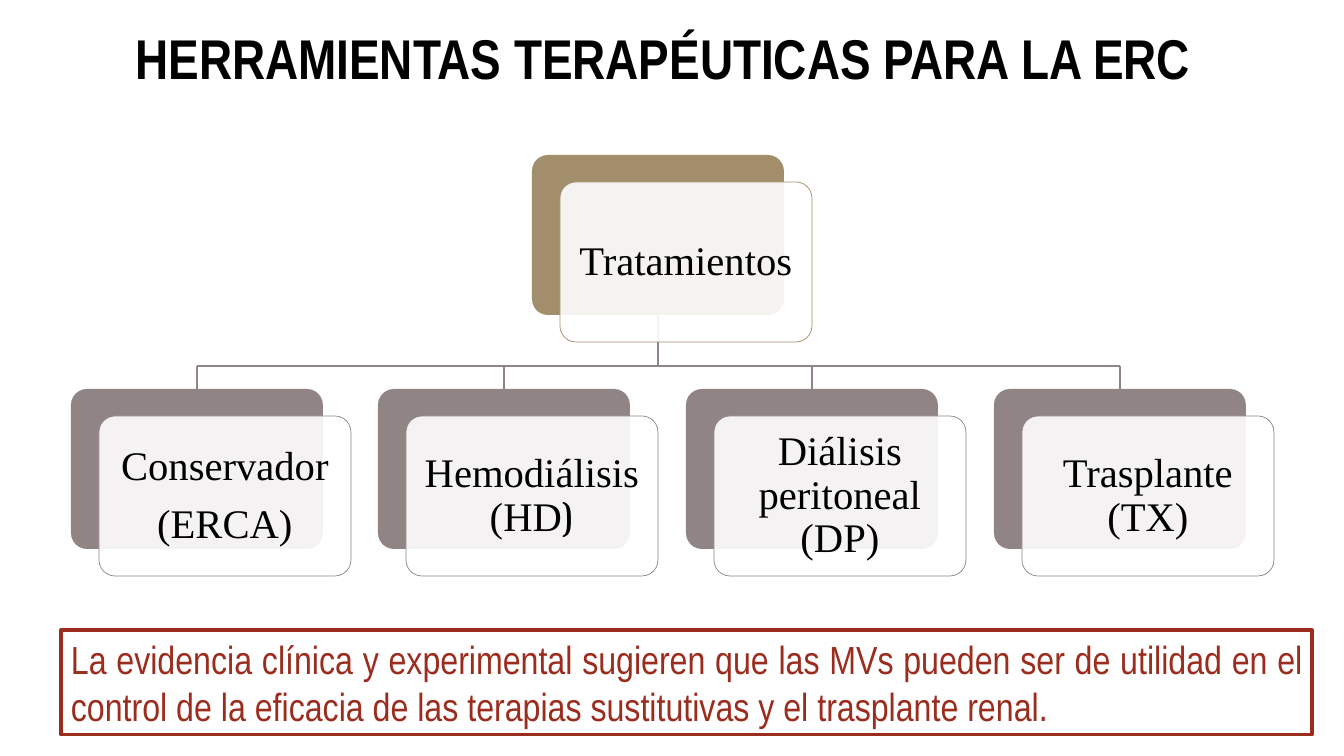
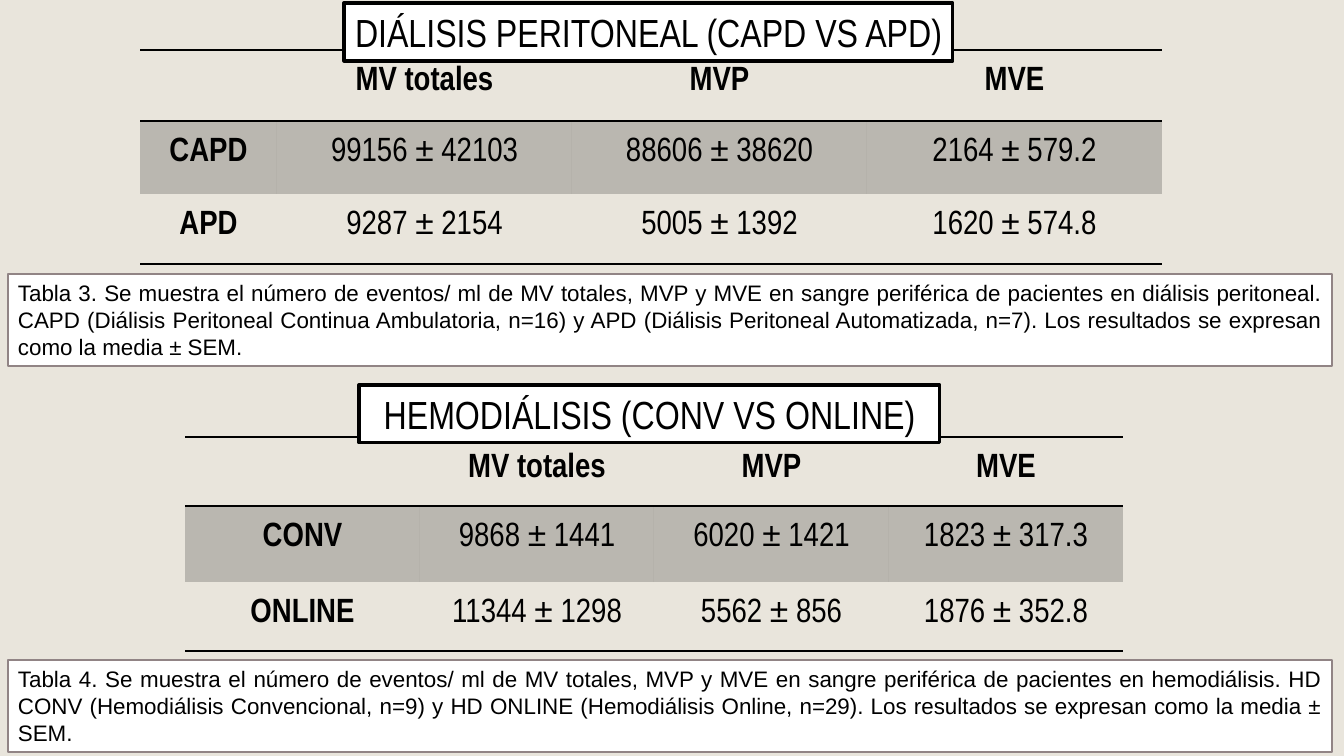
from dataclasses import dataclass

from lxml import etree
from pptx import Presentation
from pptx.dml.color import RGBColor
from pptx.enum.shapes import MSO_CONNECTOR, MSO_SHAPE
from pptx.enum.text import MSO_ANCHOR, PP_ALIGN
from pptx.oxml.ns import qn
from pptx.util import Emu, Pt

RECT, ROUNDED = MSO_SHAPE.RECTANGLE, MSO_SHAPE.ROUNDED_RECTANGLE
STRAIGHT = MSO_CONNECTOR.STRAIGHT
TOP, MIDDLE = MSO_ANCHOR.TOP, MSO_ANCHOR.MIDDLE
CENTER, JUSTIFY = PP_ALIGN.CENTER, PP_ALIGN.JUSTIFY

BLACK = RGBColor(0x00, 0x00, 0x00)
WHITE = RGBColor(0xFF, 0xFF, 0xFF)
SAND = RGBColor(0xE9, 0xE5, 0xDC)
OCHRE = RGBColor(0xA2, 0x8E, 0x6A)
MAUVE = RGBColor(0x91, 0x84, 0x85)
RUST = RGBColor(0x9B, 0x2D, 0x1F)

# Font formats
HEADLINE = {"name": "Arial Narrow", "size": Pt(40), "bold": True}
BANNER = {"name": "Arial Narrow", "size": Pt(28)}
CAPTION = {"name": "Arial", "size": Pt(16)}
TABLE_TEXT = {"name": "Arial Narrow", "size": Pt(24), "bold": False}
TABLE_LABEL = TABLE_TEXT | {"bold": True}
CARD_TEXT = {"name": "Times New Roman", "size": Pt(29)}
BRACKET = CARD_TEXT | {"name": "TeX Gyre Bonum"}

# Card geometry; the rounded corners add their own inset to the text
CARD_W, CARD_H = 252, 160
FRONT_DX, FRONT_DY, CARD_INSET = 28, 27, 10
BUS_Y = 366


def px(value: int) -> Emu:
    return Emu(round(value * 914400 / 100.8))


@dataclass(frozen=True)
class Run:
    text: str
    style: dict


@dataclass(frozen=True)
class Card:
    left: int
    top: int
    color: RGBColor
    paragraphs: list[list[Run]]


@dataclass(frozen=True)
class TextBlock:
    left: int
    top: int
    width: int
    height: int
    text: str
    style: dict
    align: PP_ALIGN = CENTER
    color: RGBColor = BLACK
    line: RGBColor | None = None
    line_pt: float = 2.25


@dataclass(frozen=True)
class ResultTable:
    left: int
    top: int
    columns: list[int]
    row_heights: list[int]
    rows: list[list[str]]


def add_run(paragraph, run: Run, color: RGBColor = BLACK) -> None:
    part = paragraph.add_run()
    part.text = run.text
    for attribute, value in run.style.items():
        setattr(part.font, attribute, value)
    part.font.color.rgb = color


def set_alpha(fill, percent: int) -> None:
    color = fill._xPr.find(qn("a:solidFill"))[0]
    etree.SubElement(color, qn("a:alpha"), val=str(percent * 1000))


def add_box(slide, kind, left: int, top: int, width: int, height: int, fill: RGBColor,
            line: RGBColor | None = None, line_pt: float = 1):
    box = slide.shapes.add_shape(kind, px(left), px(top), px(width), px(height))
    box.shadow.inherit = False
    box.fill.solid()
    box.fill.fore_color.rgb = fill
    if line is None:
        box.line.fill.background()
    else:
        box.line.color.rgb = line
        box.line.width = Pt(line_pt)
    return box


def add_text_block(slide, block: TextBlock) -> None:
    box = add_box(slide, RECT, block.left, block.top, block.width, block.height,
                  WHITE, block.line, block.line_pt)
    frame = box.text_frame
    frame.word_wrap = True
    frame.vertical_anchor = TOP
    paragraph = frame.paragraphs[0]
    paragraph.alignment = block.align
    add_run(paragraph, Run(block.text, block.style), block.color)


# Cards of the treatment tree
def add_card_back(slide, card: Card):
    back = add_box(slide, ROUNDED, card.left, card.top, CARD_W, CARD_H, card.color)
    back.adjustments[0] = 0.1
    return back


def add_card_front(slide, card: Card) -> None:
    front = add_box(slide, ROUNDED, card.left + FRONT_DX, card.top + FRONT_DY,
                    CARD_W, CARD_H, WHITE, card.color, 0.5)
    front.adjustments[0] = 0.1
    set_alpha(front.fill, 90)
    frame = front.text_frame
    frame.word_wrap = True
    frame.vertical_anchor = MIDDLE
    for side in ("left", "right", "top", "bottom"):
        setattr(frame, f"margin_{side}", px(CARD_INSET))
    for index, runs in enumerate(card.paragraphs):
        paragraph = frame.add_paragraph() if index else frame.paragraphs[0]
        paragraph.alignment = CENTER
        paragraph.line_spacing = 0.9
        paragraph.space_after = Pt(10)
        for run in runs:
            add_run(paragraph, run)


def add_branch(slide, x1: int, y1: int, x2: int, y2: int):
    branch = slide.shapes.add_connector(STRAIGHT, px(x1), px(y1), px(x2), px(y2))
    branch.line.color.rgb = MAUVE
    branch.line.width = Pt(1)
    etree.SubElement(branch._element.spPr, qn("a:effectLst"))
    return branch


def add_tree(slide, root: Card, children: list[Card]) -> None:
    root_back = add_card_back(slide, root)
    child_backs = [add_card_back(slide, child) for child in children]
    centers = [child.left + CARD_W // 2 for child in children]
    root_center = root.left + CARD_W // 2

    trunk = add_branch(slide, root_center, root.top + CARD_H, root_center, BUS_Y)
    trunk.begin_connect(root_back, 2)
    add_branch(slide, centers[0], BUS_Y, centers[-1], BUS_Y)
    for child, back, center in zip(children, child_backs, centers):
        drop = add_branch(slide, center, BUS_Y, center, child.top)
        drop.end_connect(back, 0)

    for card in (root, *children):
        add_card_front(slide, card)


# Tables of results
def set_borders(cell, ruled: set[str]) -> None:
    properties = cell._tc.get_or_add_tcPr()
    for index, side in enumerate("LRTB"):
        border = etree.Element(qn(f"a:ln{side}"), w=str(Pt(1)))
        if side in ruled:
            solid = etree.SubElement(border, qn("a:solidFill"))
            etree.SubElement(solid, qn("a:srgbClr"), val=str(BLACK))
        else:
            etree.SubElement(border, qn("a:noFill"))
        properties.insert(index, border)


def add_result_table(slide, results: ResultTable) -> None:
    rows, columns = results.rows, results.columns
    table = slide.shapes.add_table(
        len(rows), len(columns), px(results.left), px(results.top),
        px(sum(columns)), px(sum(results.row_heights))).table
    table.first_row = table.horz_banding = False
    for column, width in zip(table.columns, columns):
        column.width = px(width)
    for row, height in zip(table.rows, results.row_heights):
        row.height = px(height)

    ruled_sides = [{"T", "B"}, {"T"}, {"B"}]
    for r, texts in enumerate(rows):
        for c, text in enumerate(texts):
            cell = table.cell(r, c)
            cell.margin_left = cell.margin_right = px(7)
            cell.margin_top = cell.margin_bottom = 0
            if r == 1:
                cell.fill.solid()
                cell.fill.fore_color.rgb = BLACK
                set_alpha(cell.fill, 20)
            else:
                cell.fill.background()
            set_borders(cell, ruled_sides[r])
            if text:
                paragraph = cell.text_frame.paragraphs[0]
                paragraph.alignment = CENTER
                paragraph.line_spacing = 1.5
                style = TABLE_TEXT if r and c else TABLE_LABEL
                add_run(paragraph, Run(text, style))


def build_treatments(slide) -> None:
    names = [
        [[Run("Conservador", CARD_TEXT)], [Run("(ERCA)", CARD_TEXT)]],
        [[Run("Hemodiálisis (HD", CARD_TEXT), Run(")", BRACKET)]],
        [[Run("Diálisis peritoneal (DP)", CARD_TEXT)]],
        [[Run("Trasplante (TX)", CARD_TEXT)]],
    ]
    first_left, last_left = 71, 994
    span = last_left - first_left
    children = [Card(first_left + span * i // (len(names) - 1), 389, MAUVE, name)
                for i, name in enumerate(names)]
    root = Card(532, 155, OCHRE, [[Run("Tratamientos", CARD_TEXT)]])
    add_tree(slide, root, children)

    add_text_block(slide, TextBlock(
        61, 19, 1204, 78, "HERRAMIENTAS TERAPÉUTICAS PARA LA ERC", HEADLINE))
    add_text_block(slide, TextBlock(
        61, 630, 1251, 105,
        "La evidencia clínica y experimental sugieren que las MVs pueden ser de utilidad "
        "en el control de la eficacia de las terapias sustitutivas y el trasplante renal.",
        BANNER, JUSTIFY, RUST, RUST))


def build_results(slide) -> None:
    header = ["", "MV totales", "MVP", "MVE"]
    tables = [
        ResultTable(140, 50, [137, 295, 295, 295], [71, 73, 70], [
            header,
            ["CAPD", "99156 ± 42103", "88606 ± 38620", "2164 ± 579.2"],
            ["APD", "9287 ± 2154", "5005 ± 1392", "1620 ± 574.8"]]),
        ResultTable(185, 437, [235, 234, 235, 234], [69, 76, 69], [
            header,
            ["CONV", "9868 ± 1441", "6020 ± 1421", "1823 ± 317.3"],
            ["ONLINE", "11344 ± 1298", "5562 ± 856", "1876 ± 352.8"]]),
    ]
    captions = [
        (274, "Tabla 3. Se muestra el número de eventos/ ml de MV totales, MVP y MVE en sangre "
              "periférica de pacientes en diálisis peritoneal. CAPD (Diálisis Peritoneal "
              "Continua Ambulatoria, n=16) y APD (Diálisis Peritoneal Automatizada, n=7). "
              "Los resultados se expresan como la media ± SEM."),
        (660, "Tabla 4. Se muestra el número de eventos/ ml de MV totales, MVP y MVE en sangre "
              "periférica de pacientes en hemodiálisis. HD CONV (Hemodiálisis Convencional, "
              "n=9) y HD ONLINE (Hemodiálisis Online, n=29). Los resultados se expresan como "
              "la media ± SEM."),
    ]
    banners = [
        (344, 3, 609, "DIÁLISIS PERITONEAL (CAPD VS APD)"),
        (359, 385, 581, "HEMODIÁLISIS (CONV VS ONLINE)"),
    ]
    for table in tables:
        add_result_table(slide, table)
    for top, text in captions:
        add_text_block(slide, TextBlock(8, top, 1324, 92, text, CAPTION, JUSTIFY,
                                        line=MAUVE, line_pt=1))
    for left, top, width, text in banners:
        add_text_block(slide, TextBlock(left, top, width, 58, text, BANNER, line=BLACK))


def main() -> None:
    deck = Presentation()
    deck.slide_width, deck.slide_height = px(1344), px(756)
    blank = deck.slide_layouts[6]
    for background, build in ((WHITE, build_treatments), (SAND, build_results)):
        slide = deck.slides.add_slide(blank)
        slide.background.fill.solid()
        slide.background.fill.fore_color.rgb = background
        build(slide)
    deck.save("out.pptx")


if __name__ == "__main__":
    main()
